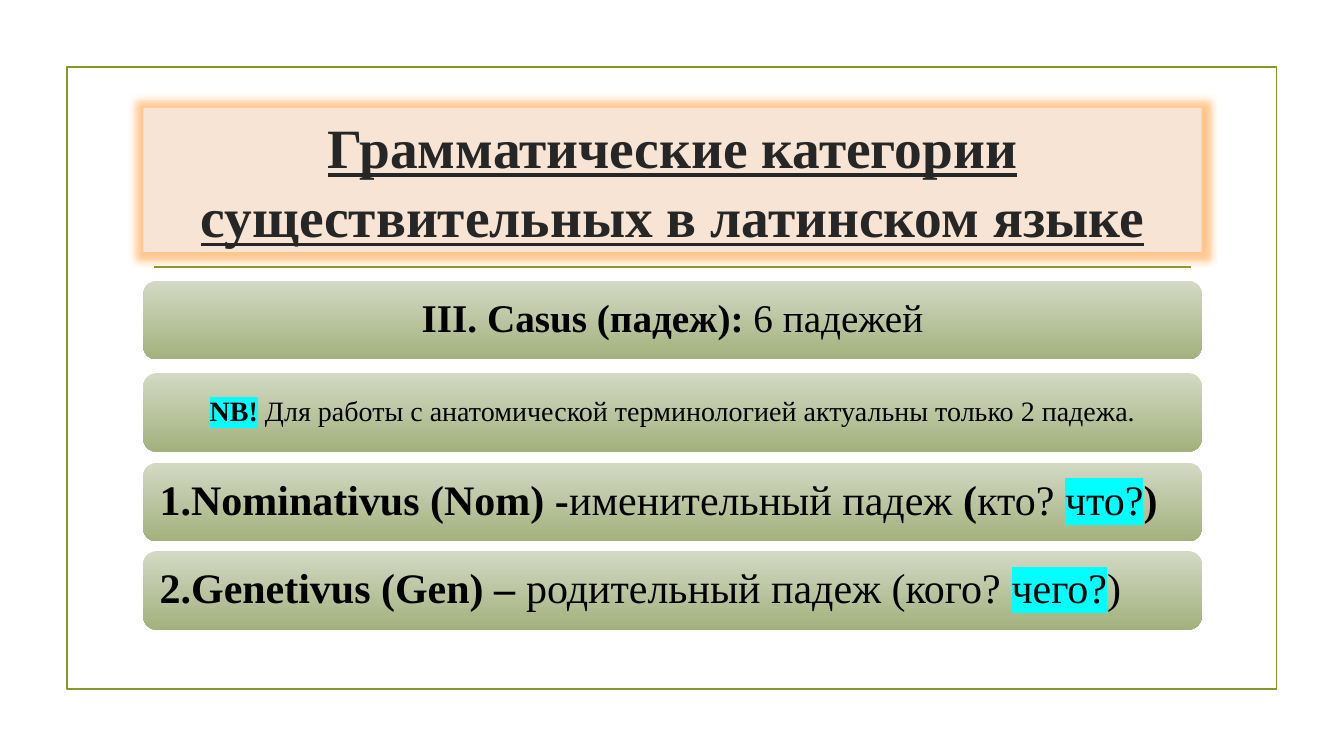
from lxml import etree
from pptx import Presentation
from pptx.dml.color import RGBColor
from pptx.enum.shapes import MSO_CONNECTOR, MSO_SHAPE
from pptx.enum.text import MSO_ANCHOR, MSO_AUTO_SIZE, PP_ALIGN
from pptx.oxml.ns import qn
from pptx.util import Pt

RECT, ROUND = MSO_SHAPE.RECTANGLE, MSO_SHAPE.ROUNDED_RECTANGLE
STRAIGHT = MSO_CONNECTOR.STRAIGHT
MIDDLE = MSO_ANCHOR.MIDDLE
NO_FIT = MSO_AUTO_SIZE.NONE
LEFT, CENTER = PP_ALIGN.LEFT, PP_ALIGN.CENTER

FONT = "Times New Roman"
COLORS = {
    "olive": "83992A",
    "peach": "F7E4D4",
    "glow": "FF9933",
    "title": "262626",
    "text": "000000",
    "light": "D3D9C4",
    "dark": "A3B17D",
    "mark": "00FFFF",
}
BOX_X, BOX_W, BAR_H = 102.4, 756, 56

# Each bar: top, text size, inset, alignment, runs of (text, style);
# style "b" is bold, "m" is marked.
BARS = [
    (200.7, 28, 8.4, CENTER,
     [("III. Casus (падеж): ", "b"), ("6 падежей", "")]),
    (266.6, 20, 6, CENTER,
     [("NB!", "bm"), (" ", "b"),
      ("Для работы с анатомической терминологией актуальны только 2 падежа.", "")]),
    (330.7, 30, 9, LEFT,
     [("1.Nominativus (Nom) -", "b"), ("именительный падеж", ""), (" (", "b"),
      ("кто? ", ""), ("что?", "m"), (")", "b")]),
    (393.7, 30, 9, LEFT,
     [("2.Genetivus (Gen) – ", "b"), ("родительный падеж (кого? ", ""),
      ("чего?", "m"), (")", "")]),
]


def rgb(name):
    return RGBColor.from_string(COLORS[name])


def add_color(parent, name):
    return etree.SubElement(parent, qn("a:srgbClr"), val=COLORS[name])


def set_font(para, size, color):
    font = para.font
    font.name, font.size = FONT, Pt(size)
    font.color.rgb = rgb(color)


def add_frame(slide):
    frame = slide.shapes.add_shape(RECT, Pt(47.8), Pt(48), Pt(864), Pt(444))
    frame.shadow.inherit = False
    frame.fill.background()
    frame.line.color.rgb = rgb("olive")
    frame.line.width = Pt(1.25)


def add_rule(slide):
    rule = slide.shapes.add_connector(STRAIGHT, Pt(110), Pt(190.8), Pt(850.4), Pt(190.8))
    rule.line.color.rgb = rgb("olive")
    rule.line.width = Pt(1.25)
    etree.SubElement(rule._element.spPr, qn("a:effectLst"))


def add_title(slide, text):
    """Fill the title, give it a glow and bring it in front of the rule."""
    title = slide.shapes.title
    title.left, title.top = Pt(BOX_X), Pt(77)
    title.width, title.height = Pt(BOX_W), Pt(103)
    title.fill.solid()
    title.fill.fore_color.rgb = rgb("peach")
    effects = etree.SubElement(title._element.spPr, qn("a:effectLst"))
    glow = etree.SubElement(effects, qn("a:glow"), rad=str(Pt(11)))
    etree.SubElement(add_color(glow, "glow"), qn("a:alpha"), val="55000")
    frame = title.text_frame
    frame.text = text
    frame.word_wrap, frame.auto_size = True, NO_FIT
    frame.vertical_anchor = MIDDLE
    para = frame.paragraphs[0]
    para.alignment, para.line_spacing = CENTER, 1.04
    set_font(para, 39.6, "title")
    para.font.bold = para.font.underline = True
    slide.shapes._spTree.append(title._element)


def add_bar(slide, top, size, inset, align, runs):
    bar = slide.shapes.add_shape(ROUND, Pt(BOX_X), Pt(top), Pt(BOX_W), Pt(BAR_H))
    bar.shadow.inherit = False
    bar.line.fill.background()
    bar.fill.gradient()
    bar.fill.gradient_angle = 270
    for stop, name in zip(bar.fill.gradient_stops, ("light", "dark")):
        stop.color.rgb = rgb(name)
    frame = bar.text_frame
    frame.word_wrap, frame.vertical_anchor = True, MIDDLE
    frame.margin_left = frame.margin_right = Pt(inset)
    frame.margin_top = frame.margin_bottom = Pt(inset)
    para = frame.paragraphs[0]
    para.alignment, para.line_spacing = align, 0.9
    set_font(para, size, "text")
    for text, style in runs:
        run = para.add_run()
        run.text = text
        run.font.bold = "b" in style
        if "m" in style:
            mark = etree.SubElement(run.font._element, qn("a:highlight"))
            add_color(mark, "mark")


def main():
    deck = Presentation()
    deck.slide_width, deck.slide_height = Pt(960), Pt(540)
    slide = deck.slides.add_slide(deck.slide_layouts[5])
    add_frame(slide)
    add_rule(slide)
    add_title(slide, "Грамматические категории существительных в латинском языке")
    for bar in BARS:
        add_bar(slide, *bar)
    deck.save("out.pptx")


if __name__ == "__main__":
    main()
